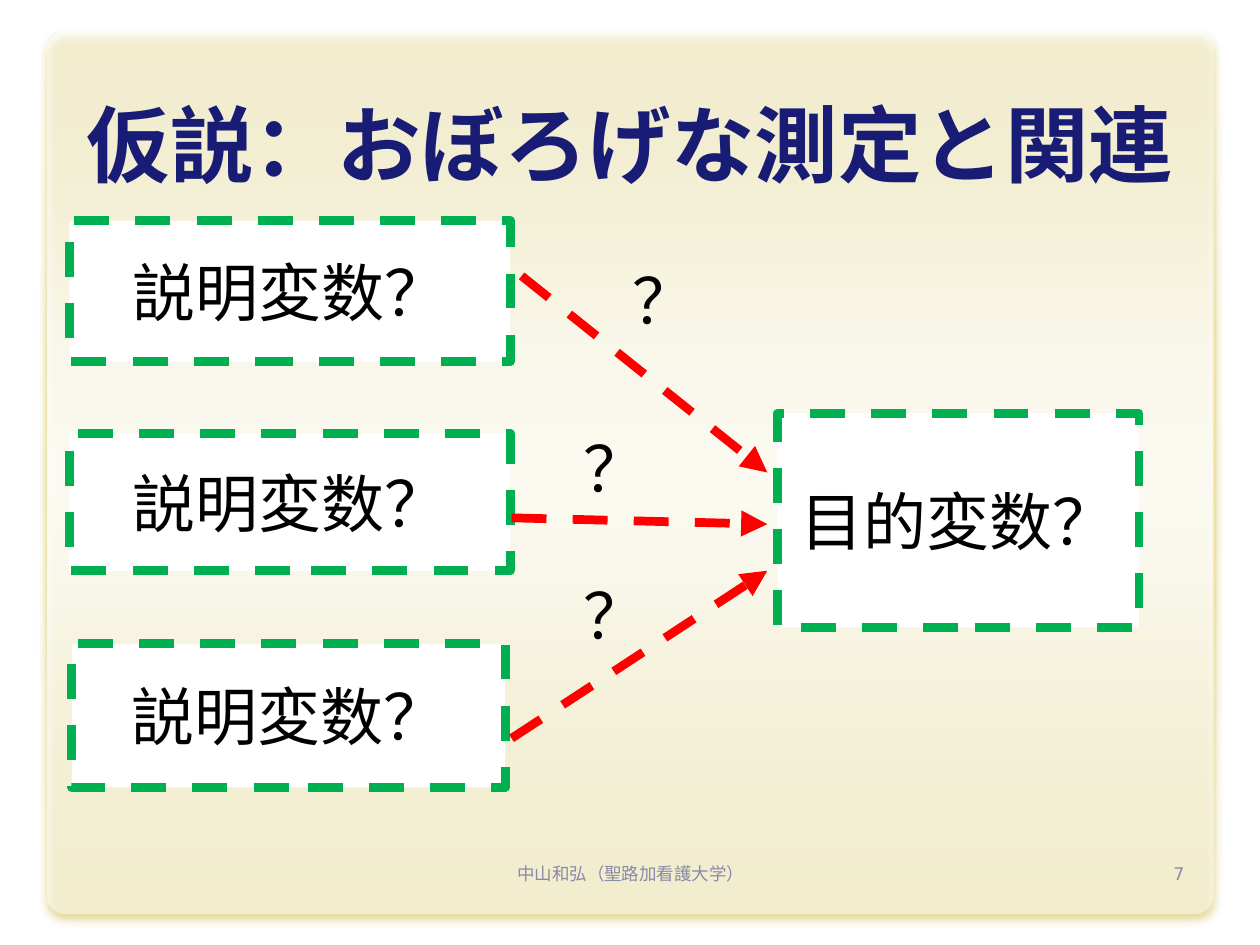
from lxml.etree import SubElement
from pptx import Presentation
from pptx.dml.color import RGBColor
from pptx.enum.dml import MSO_LINE
from pptx.enum.shapes import MSO_CONNECTOR, MSO_SHAPE
from pptx.enum.text import MSO_ANCHOR, PP_ALIGN
from pptx.oxml import parse_xml
from pptx.oxml.ns import nsdecls, qn
from pptx.util import Inches, Pt

COLS, ROWS = 100, 75
CELL = Inches(0.1)

NAVY = RGBColor(0x18, 0x1C, 0x74)
GREEN = RGBColor(0x00, 0xB0, 0x50)
RED = RGBColor(0xFF, 0x00, 0x00)
GREY = RGBColor(0x89, 0x8A, 0xA7)
WHITE = RGBColor(0xFF, 0xFF, 0xFF)
BLACK = RGBColor(0x00, 0x00, 0x00)
GOLD = RGBColor(0xC5, 0xAF, 0x25)

PANEL_STOPS = [(0, 50), (35, 87), (50, 92), (60, 89), (100, 55)]  # position, opacity in %
EXPLANATORY = [(5.5, 17.5, 35, 11.2), (5.5, 34.4, 35, 10.9), (5.7, 51.1, 34.4, 11.4)]
OBJECTIVE = (61.7, 32.8, 28.7, 17)
ARROWS = [(41.4, 21.9, 37.5), (40.6, 41.1, 41.6), (40.6, 58.6, 45.3)]  # start column, start row, end row
ARROW_END = 60.9
QUESTION_MARKS = [(49.2, 20.3), (45.3, 33.6), (45.3, 45.3)]


def grid(*cells):
    """Turn columns and rows into slide lengths."""
    return [round(c * CELL) for c in cells]


def write(shape, text, font, size, color, align=PP_ALIGN.LEFT, anchor=MSO_ANCHOR.TOP, bold=False):
    tf = shape.text_frame
    tf.word_wrap = True
    tf.vertical_anchor = anchor
    p = tf.paragraphs[0]
    p.text = text
    p.alignment = align
    p.font.name = font
    p.font.size = Pt(size)
    p.font.bold = bold
    p.font.color.rgb = color


def add_label(slide, cells, *args, **kwargs):
    write(slide.shapes.add_textbox(*grid(*cells)), *args, **kwargs)


def dash(line, color):
    line.color.rgb = color
    line.width = Pt(5)
    line.dash_style = MSO_LINE.DASH


def add_panel(slide):
    """Add the rounded backdrop: translucent white over a golden shadow."""
    sp = slide.shapes.add_shape(MSO_SHAPE.ROUNDED_RECTANGLE, *grid(3.8, 2.5, 92.5, 70))
    sp.adjustments[0] = 0.02
    sp.line.fill.background()
    stops = "".join(
        f'<a:gs pos="{pos * 1000}"><a:srgbClr val="{WHITE}"><a:alpha val="{opacity * 1000}"/></a:srgbClr></a:gs>'
        for pos, opacity in PANEL_STOPS)
    gradient = parse_xml(f'<a:gradFill {nsdecls("a")} rotWithShape="1"><a:gsLst>{stops}</a:gsLst>'
                         '<a:lin ang="5400000" scaled="0"/></a:gradFill>')
    shadow = parse_xml(f'<a:effectLst {nsdecls("a")}><a:outerShdw blurRad="{Pt(5)}" dist="{Pt(3.6)}" '
                       f'dir="5400000" rotWithShape="0"><a:srgbClr val="{GOLD}"><a:alpha val="90000"/>'
                       '</a:srgbClr></a:outerShdw></a:effectLst>')
    props = sp._element.spPr
    props.find(qn("a:prstGeom")).addnext(gradient)
    props.append(shadow)


def add_variable(slide, cells, text):
    sp = slide.shapes.add_shape(MSO_SHAPE.RECTANGLE, *grid(*cells))
    sp.shadow.inherit = False
    sp.fill.solid()
    sp.fill.fore_color.rgb = WHITE
    dash(sp.line, GREEN)
    write(sp, text, "Cambria", 36, BLACK, PP_ALIGN.CENTER, MSO_ANCHOR.MIDDLE)


def add_arrow(slide, col, row, end_row):
    arrow = slide.shapes.add_connector(MSO_CONNECTOR.STRAIGHT, *grid(col, row, ARROW_END, end_row))
    dash(arrow.line, RED)
    SubElement(arrow.line._get_or_add_ln(), qn("a:tailEnd"), type="triangle")
    SubElement(arrow._element.spPr, qn("a:effectLst"))


def main():
    prs = Presentation()
    prs.slide_width, prs.slide_height = COLS * CELL, ROWS * CELL
    slide = prs.slides.add_slide(prs.slide_layouts[6])

    add_panel(slide)
    add_label(slide, (5, 3.3, 90, 12.5), "仮説：おぼろげな測定と関連", "Roboto", 47.7, NAVY,
              PP_ALIGN.CENTER, MSO_ANCHOR.BOTTOM, bold=True)
    add_variable(slide, OBJECTIVE, "目的変数？")
    for cells in EXPLANATORY:
        add_variable(slide, cells, "説明変数？")
    for arrow in ARROWS:
        add_arrow(slide, *arrow)
    add_label(slide, (34.2, 68, 31.7, 4), "中山和弘（聖路加看護大学）", "DejaVu Sans", 10, GREY, PP_ALIGN.CENTER)
    add_label(slide, (71.7, 68, 23.3, 4), "7", "DejaVu Sans", 10, GREY, PP_ALIGN.RIGHT)
    for col, row in QUESTION_MARKS:
        add_label(slide, (col, row, 10.9, 7.1), "？", "Calibri", 36, BLACK)

    prs.save("out.pptx")


if __name__ == "__main__":
    main()
